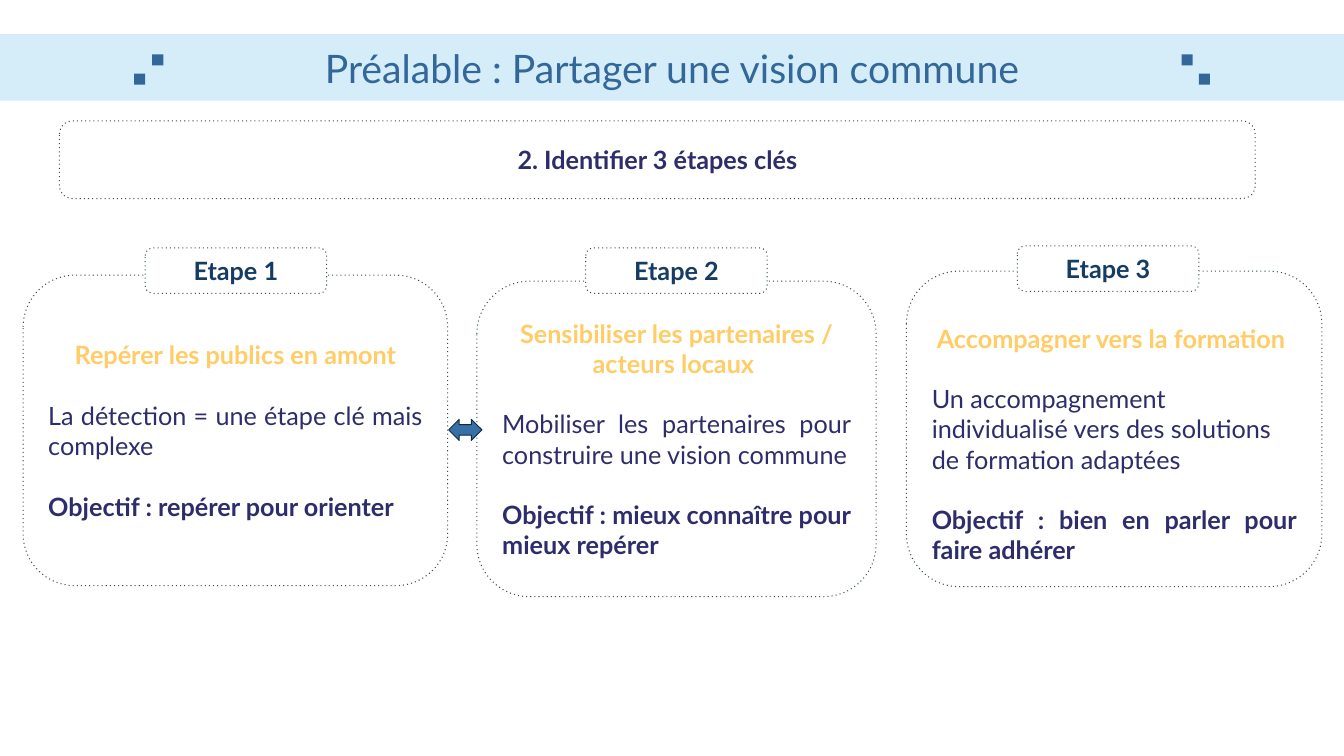
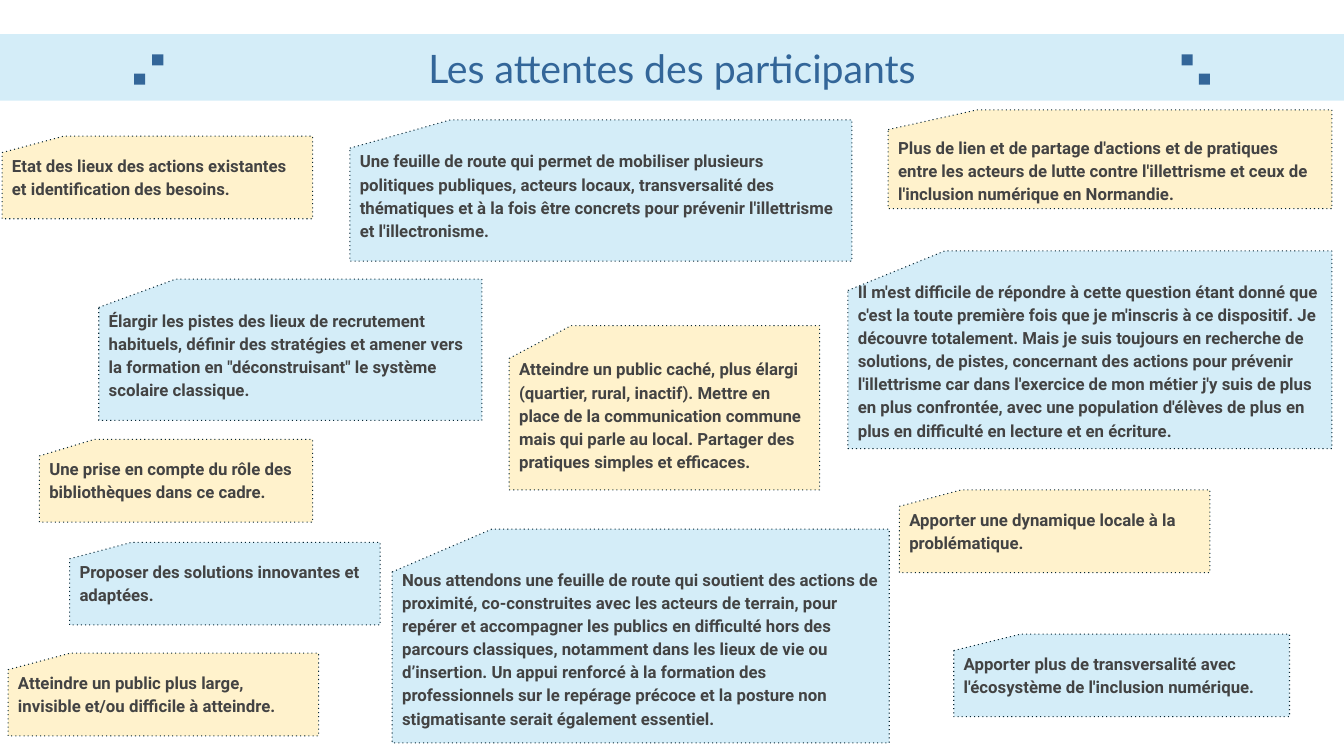
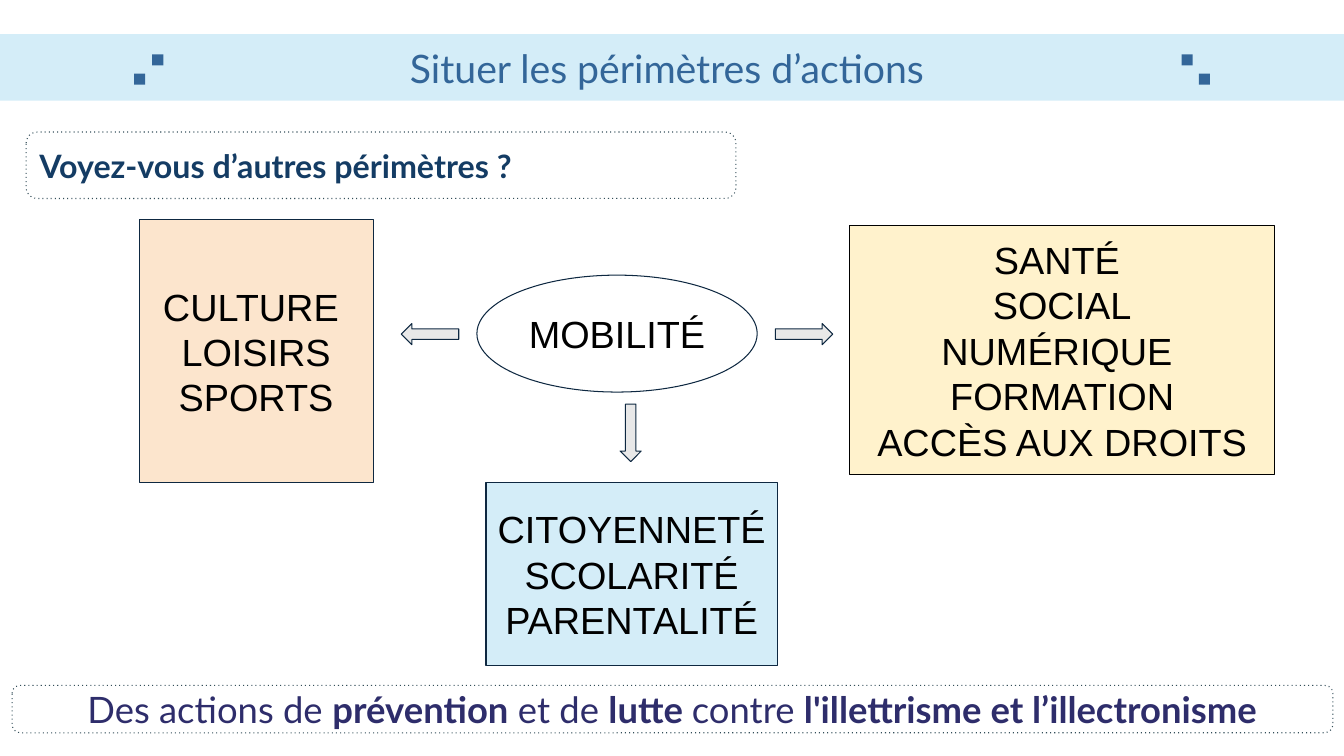
from pptx import Presentation
from pptx.dml.color import RGBColor
from pptx.enum.shapes import MSO_SHAPE as Form
from pptx.enum.text import MSO_ANCHOR as Anchor, PP_ALIGN as Align
from pptx.oxml.ns import qn
from pptx.util import Inches, Pt
from lxml.etree import SubElement

hue = RGBColor.from_string
SKY, BLUE, NAVY, PLUM = "D4EDF8", "336699", "143C64", "2E2D6B"
GOLD, CREAM, PEACH, GREY = "FFCC66", "FFF2CC", "FCE5CD", "434343"
WHITE, BLACK, MIST, STEEL = "FFFFFF", "000000", "E8E8E8", "376FA7"
DOTS, EDGE = "082836", "0E2841"
LINE = 21.6


def box(slide, form, at, fill=None, line=None, alpha=None, pad=0.05):
    shape = slide.shapes.add_shape(form, *[Inches(n) for n in at])
    shape.shadow.inherit = False
    if fill:
        shape.fill.solid()
        shape.fill.fore_color.rgb = hue(fill)
    else:
        shape.fill.background()
    if line:
        shape.line.color.rgb = hue(line)
        shape.line.width = Pt(0.75)
    else:
        shape.line.fill.background()
    if line == DOTS:
        edge = shape._element.spPr.find(qn("a:ln"))
        SubElement(edge, qn("a:prstDash")).set("val", "dot")
        if alpha:
            tint = edge.find(qn("a:solidFill"))[0]
            SubElement(tint, qn("a:alpha")).set("val", str(alpha * 1000))
    frame = shape.text_frame
    frame.word_wrap = True
    frame.vertical_anchor = Anchor.MIDDLE
    frame.margin_left = frame.margin_right = Inches(0.1)
    frame.margin_top = frame.margin_bottom = Inches(pad)
    return shape


def say(shape, runs, size, color, font="Lato", align=Align.CENTER, gap=0):
    frame = shape.text_frame
    para = frame.paragraphs[0]
    if para.runs:
        para = frame.add_paragraph()
    para.alignment = align
    para.space_before = Pt(gap)
    for text, bold in runs:
        run = para.add_run()
        run.text = text
        run.font.size = Pt(size)
        run.font.name = font
        run.font.bold = bold
        run.font.color.rgb = hue(color)
    return para


deck = Presentation()
deck.slide_width = Inches(13.33)
deck.slide_height = Inches(7.5)

pages = []
for title in (
    "Préalable : Partager une vision commune",
    "Les attentes des participants",
    "Situer les périmètres d’actions ",
):
    page = deck.slides.add_slide(deck.slide_layouts[6])
    band = box(page, Form.RECTANGLE, (0, 0.34, 13.33, 0.66), SKY)
    say(band, [(title, False)], 28, BLUE)
    for x, y in ((1.51, 0.54), (1.33, 0.73), (11.72, 0.54), (11.89, 0.73)):
        box(page, Form.RECTANGLE, (x, y, 0.11, 0.11), BLUE)
    pages.append(page)
steps, hopes, scope = pages

head = box(steps, Form.ROUNDED_RECTANGLE, (0.59, 1.2, 11.86, 0.77), None, DOTS, 82)
say(head, [("2. Identifier 3 étapes clés", True)], 18, PLUM)

stages = [
    ((0.23, 2.73, 4.21, 3.08), (1.44, 2.46), 0.05, Align.JUSTIFY,
     "Repérer les publics en amont",
     "La détection = une étape clé mais complexe ",
     "Objectif : repérer pour orienter"),
    ((4.73, 2.79, 3.96, 3.13), (5.81, 2.46), 0.05, Align.JUSTIFY,
     "Sensibiliser les partenaires / acteurs locaux ",
     "Mobiliser les partenaires pour construire une vision commune",
     "Objectif : mieux connaître pour mieux repérer"),
    ((8.99, 2.69, 4.12, 3.13), (10.09, 2.44), 0.35, Align.LEFT,
     "Accompagner vers la formation ",
     "Un accompagnement individualisé vers des solutions de formation adaptées",
     "Objectif : bien en parler pour faire adhérer"),
]
for num, (at, spot, top, align, name, body, goal) in enumerate(stages, 1):
    card = box(steps, Form.ROUNDED_RECTANGLE, at, None, DOTS, 82)
    card.text_frame.margin_top = Inches(top)
    say(card, [(name, True)], 18, GOLD)
    say(card, [(body, False)], 18, PLUM, align=align, gap=LINE)
    say(card, [(goal, True)], 18, PLUM, align=Align.JUSTIFY, gap=LINE)
    tab = box(steps, Form.ROUNDED_RECTANGLE, (*spot, 1.8, 0.45), WHITE, DOTS, 82)
    say(tab, [(f"Etape {num}", True)], 18, NAVY)
box(steps, Form.LEFT_RIGHT_ARROW, (4.45, 4.16, 0.33, 0.21), STEEL, EDGE)

notes = [
    ((0.02, 1.35, 3.08, 0.82), CREAM, 0.3,
     "Etat des lieux des actions existantes et identification des besoins."),
    ((3.47, 1.19, 4.98, 1.4), SKY, 0.3,
     "Une feuille de route qui permet de mobiliser plusieurs politiques publiques, "
     "acteurs locaux, transversalité des thématiques et à la fois être concrets pour "
     "prévenir l'illettrisme et l'illectronisme."),
    ((8.81, 1.09, 4.4, 0.98), CREAM, 0.1,
     "Plus de lien et de partage d'actions et de pratiques entre les acteurs de lutte "
     "contre l'illettrisme et ceux de l'inclusion numérique en Normandie."),
    ((8.41, 2.49, 4.8, 1.96), SKY, 0.3,
     "Il m'est difficile de répondre à cette question étant donné que c'est la toute "
     "première fois que je m'inscris à ce dispositif. Je découvre totalement. Mais je "
     "suis toujours en recherche de solutions, de pistes, concernant des actions pour "
     "prévenir l'illettrisme car dans l'exercice de mon métier j'y suis de plus en plus "
     "confrontée, avec une population d'élèves de plus en plus en difficulté en lecture "
     "et en écriture."),
    ((0.39, 4.36, 2.71, 0.82), CREAM, 0.3,
     "Une prise en compte du rôle des bibliothèques dans ce cadre."),
    ((5.05, 3.23, 3.08, 1.63), CREAM, 0.3,
     "Atteindre un public caché, plus élargi (quartier, rural, inactif). Mettre en place "
     "de la communication commune mais qui parle au local. Partager des pratiques "
     "simples et efficaces."),
    ((0.98, 2.77, 3.8, 1.4), SKY, 0.3,
     "Élargir les pistes des lieux de recrutement habituels, définir des stratégies et "
     "amener vers la formation en \"déconstruisant\" le système scolaire classique."),
    ((3.89, 5.25, 4.93, 2.12), SKY, 0.3,
     "Nous attendons une feuille de route qui soutient des actions de proximité, "
     "co-construites avec les acteurs de terrain, pour repérer et accompagner les "
     "publics en difficulté hors des parcours classiques, notamment dans les lieux de "
     "vie ou d’insertion. Un appui renforcé à la formation des professionnels sur le "
     "repérage précoce et la posture non stigmatisante serait également essentiel."),
    ((9.46, 6.29, 3.33, 0.82), SKY, 0.3,
     "Apporter plus de transversalité avec l'écosystème de l'inclusion numérique."),
    ((0.08, 6.48, 3.08, 0.82), CREAM, 0.3,
     "Atteindre un public plus large, invisible et/ou difficile à atteindre."),
    ((0.69, 5.38, 3.08, 0.82), SKY, 0.3,
     "Proposer des solutions innovantes et adaptées."),
    ((8.92, 4.86, 3.08, 0.82), CREAM, 0.3,
     "Apporter une dynamique locale à la problématique."),
]
for at, fill, base, text in notes:
    note = box(hopes, Form.FLOWCHART_CARD, at, fill, DOTS, pad=0.1)
    note.text_frame.margin_bottom = Inches(base)
    para = say(note, [(text, True)], 12, GREY, "Roboto", Align.LEFT)
    para.line_spacing = 1.15

foot = box(scope, Form.ROUNDED_RECTANGLE, (0.12, 6.8, 13.1, 0.47), WHITE, DOTS, 82)
say(foot, [
    ("Des actions de ", False), ("prévention", True), (" et de ", False),
    ("lutte ", True), ("contre ", False),
    ("l'illettrisme et l’illectronisme", True),
], 26, PLUM)
ask = box(scope, Form.ROUNDED_RECTANGLE, (0.26, 1.31, 7.04, 0.66), WHITE, DOTS, 82)
say(ask, [("Voyez-vous d’autres périmètres ?", True)], 23, NAVY, align=Align.LEFT)

fields = [
    (Form.OVAL, (4.73, 2.73, 2.78, 1.16), WHITE, EDGE, ["MOBILITÉ"]),
    (Form.RECTANGLE, (1.38, 2.18, 2.32, 2.61), PEACH, EDGE,
     ["CULTURE ", "LOISIRS", "SPORTS"]),
    (Form.RECTANGLE, (4.82, 4.79, 2.89, 1.81), SKY, EDGE,
     ["CITOYENNETÉ", "SCOLARITÉ", "PARENTALITÉ"]),
    (Form.RECTANGLE, (8.43, 2.24, 4.21, 2.47), CREAM, BLACK,
     ["SANTÉ ", "SOCIAL", "NUMÉRIQUE ", "FORMATION", "ACCÈS AUX DROITS"]),
]
for form, at, fill, line, words in fields:
    field = box(scope, form, at, fill, line, pad=0.1)
    for word in words:
        say(field, [(word, False)], 27, BLACK, "Arial")

for x, y, turn in ((7.69, 3.21, 0), (3.98, 3.21, 180), (5.97, 4.19, 90)):
    arrow = box(scope, Form.RIGHT_ARROW, (x, y, 0.57, 0.21), MIST, EDGE)
    arrow.rotation = turn

deck.save("out.pptx")
